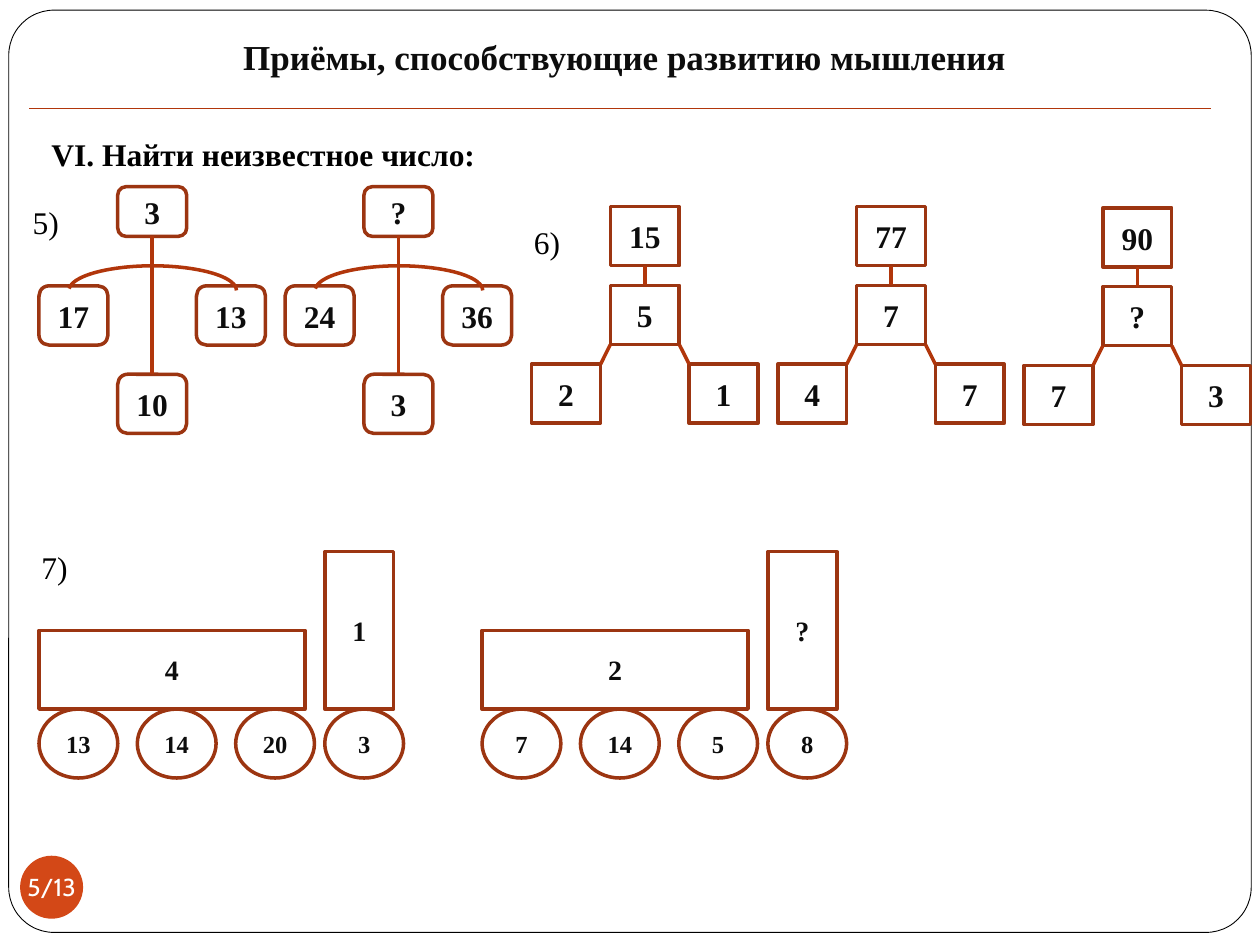
from lxml.etree import SubElement
from pptx import Presentation
from pptx.dml.color import RGBColor
from pptx.enum.shapes import MSO_CONNECTOR as Link, MSO_SHAPE as Kind
from pptx.enum.text import MSO_ANCHOR as Anchor, PP_ALIGN as Align
from pptx.oxml.ns import qn
from pptx.util import Pt

SERIF = "Times New Roman"
INK, EDGE, RUST = "0D0D0D", "9C3511", "B1360B"
paint = RGBColor.from_string


def write(shape, text, size, hue=INK, bold=True, name=SERIF,
          align=Align.CENTER, anchor=Anchor.MIDDLE, **frame):
    """Set the text of a shape; extra values go to its text frame."""
    area = shape.text_frame
    area.text = text
    for key, val in {"vertical_anchor": anchor, "word_wrap": True, **frame}.items():
        setattr(area, key, val)
    para = area.paragraphs[0]
    para.alignment = align
    font = para.runs[0].font
    for key, val in {"size": Pt(size), "bold": bold, "name": name}.items():
        setattr(font, key, val)
    font.color.rgb = paint(hue)


def box(group, kind, x, y, w, h, text="", size=18, fill="FFFFFF", edge=EDGE, line=2):
    """Add a filled, outlined shape, with centred text if there is any."""
    shape = group.shapes.add_shape(kind, Pt(x), Pt(y), Pt(w), Pt(h))
    shape.shadow.inherit = False
    if fill:
        shape.fill.solid()
        shape.fill.fore_color.rgb = paint(fill)
    else:
        shape.fill.background()
    if edge:
        shape.line.color.rgb = paint(edge)
        shape.line.width = Pt(line)
    else:
        shape.line.fill.background()
    if text:
        write(shape, text, size)
    return shape


deck = Presentation()
deck.slide_width, deck.slide_height = Pt(720), Pt(540)
slide = deck.slides.add_slide(deck.slide_layouts[5])
shapes = slide.shapes
links = []

# Frame, title and page number
title = shapes.title
for key, val in {"left": 62, "top": 16.6, "width": 590, "height": 31.7}.items():
    setattr(title, key, Pt(val))
write(title, "Приёмы, способствующие развитию мышления", 20)
frame = box(slide, Kind.ROUNDED_RECTANGLE, 5, 5.8, 710, 527, edge="000000", line=0.5)
frame.adjustments[0] = 0.049
title.element.addprevious(frame.element)
rule = shapes.add_connector(Link.STRAIGHT, Pt(16.6), Pt(61.9), Pt(692), Pt(61.9))
links.append((rule, 0.75))
page = box(slide, Kind.OVAL, 11.5, 489, 36, 36, fill="D34817", edge=None)
write(page, "5/13", 14, "FFFFFF", False, "Cabin", word_wrap=False,
      margin_left=0, margin_right=0, margin_top=0, margin_bottom=0)

# Heading and task numbers
for text, x, y, w, bold in [
    ("VI. Найти неизвестное число:", 22.3, 73.4, 272, True),
    ("5)", 11.5, 112.3, 39.6, False),
    ("6)", 298, 123.8, 45.4, False),
    ("7)", 16.6, 309.6, 45.4, False),
]:
    note = shapes.add_textbox(Pt(x), Pt(y), Pt(w), Pt(28.8))
    write(note, text, 18, "000000", bold, align=Align.LEFT, anchor=Anchor.TOP)

LEFT, STEP = 22.3, 140.7      # first column, distance between trees
WIDE, HIGH, SIDE = 39.4, 33.8, 45

# Task 5: crosses with an arc
for i, (top, left, right, low) in enumerate([("3", "17", "13", "10"),
                                            ("?", "24", "36", "3")]):
    group = shapes.add_group_shape()
    x = LEFT + i * STEP
    head, _, _, foot = [
        box(group, Kind.ROUNDED_RECTANGLE, x + col * SIDE, y, WIDE, h, text)
        for text, col, y, h in [(top, 1, 106.7, 28.4), (left, 0, 163.4, HIGH),
                                (right, 2, 163.4, HIGH), (low, 1, 213.9, HIGH)]]
    stem = group.shapes.add_connector(Link.STRAIGHT, 0, 0, 0, 0)
    stem.begin_connect(head, 2)
    stem.end_connect(foot, 0)
    links.append((stem, 2))
    arc = box(group, Kind.ARC, x + 17.1, 151.9, 95.8, 28.1, fill=None, edge=RUST)
    arc.adjustments[0], arc.adjustments[1] = 108.75, 0

# Task 6: trees with two leaves
for i, (top, mid, left, right) in enumerate([("15", "5", "2", "1"),
                                            ("77", "7", "4", "7"),
                                            ("90", "?", "7", "3")]):
    group = shapes.add_group_shape()
    x = 303.8 + i * STEP
    y = 118.8 if i == 2 else 118.1
    head, core, _, _ = [
        box(group, Kind.RECTANGLE, x + col * SIDE, y + row * SIDE, WIDE, HIGH, text)
        for text, col, row in [(top, 1, 0), (mid, 1, 1), (left, 0, 2), (right, 2, 2)]]
    stem = group.shapes.add_connector(Link.STRAIGHT, 0, 0, 0, 0)
    stem.begin_connect(head, 2)
    stem.end_connect(core, 0)
    links.append((stem, 2))
    for near, far in [(SIDE, WIDE), (SIDE + WIDE, 2 * SIDE)]:
        twig = group.shapes.add_connector(
            Link.STRAIGHT, Pt(x + near), Pt(y + SIDE + HIGH), Pt(x + far), Pt(y + 2 * SIDE))
        links.append((twig, 2))

# Task 7: trucks
BASE, CAB = 405.2, 163.3
for x, load, cab, wheels in [(LEFT, "4", "1", ["13", "14", "20", "3"]),
                             (275.5, "2", "?", ["7", "14", "5", "8"])]:
    group = shapes.add_group_shape()
    box(group, Kind.RECTANGLE, x, BASE - 45, 152, 45, load, 16)
    box(group, Kind.RECTANGLE, x + CAB, BASE - 90, WIDE, 90, cab, 16)
    for text, dx in zip(wheels, [0, 56.2, 112.4, CAB]):
        box(group, Kind.OVAL, x + dx, BASE, 45, WIDE, text, 14)

for link, width in links:
    link.line.color.rgb = paint(RUST)
    link.line.width = Pt(width)
    SubElement(link.element.spPr, qn("a:effectLst"))

deck.save("out.pptx")
